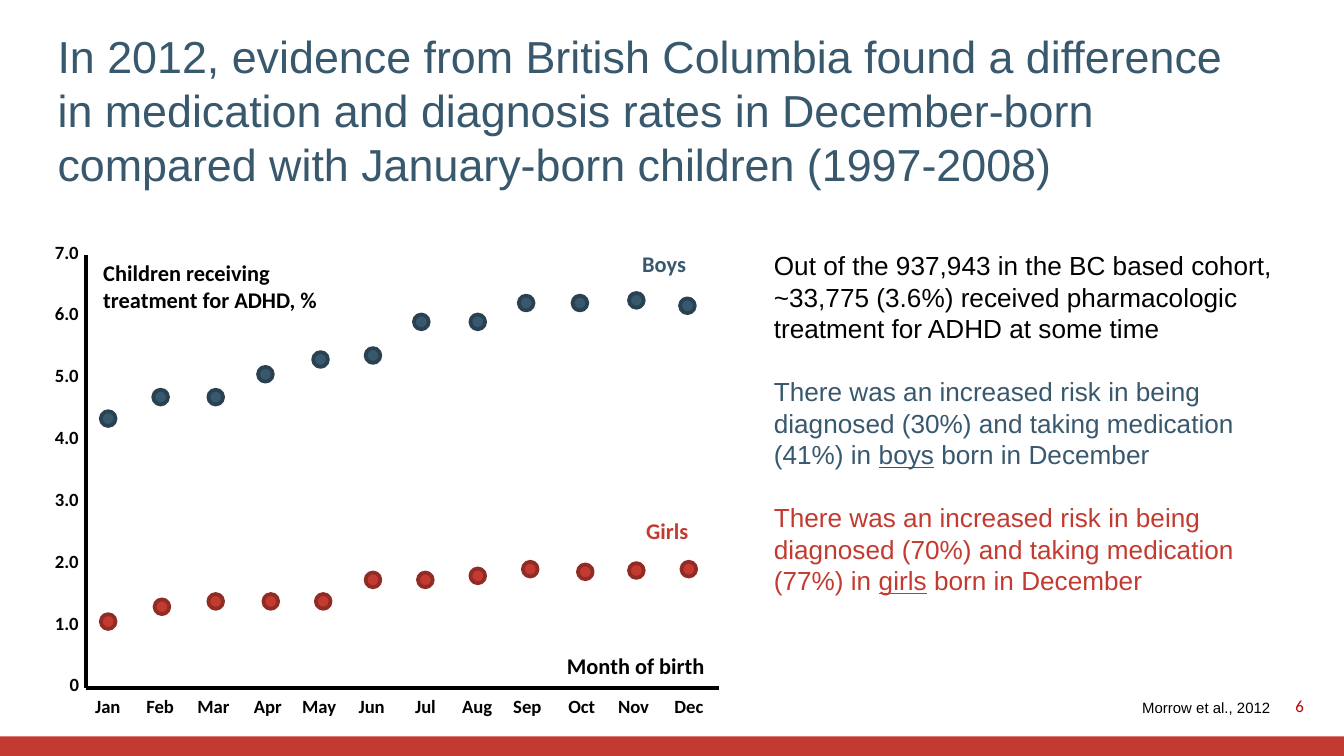
"""Build the slide on ADHD treatment by month of birth in British Columbia."""
from dataclasses import dataclass

from lxml import etree
from pptx import Presentation, util as u
from pptx.dml.color import RGBColor as Rgb
from pptx.enum import shapes, text
from pptx.oxml import ns


@dataclass(frozen=True)
class Theme:
    blue: str = "38586E"
    navy: str = "294151"
    red: str = "C33B30"
    dark: str = "902C24"
    page: str = "C00000"
    ink: str = "000000"
    head: int = 24
    body: int = 14
    label: int = 12
    tick: int = 10
    num: int = 9
    cite: int = 8
    sans: str = "Arial"
    plot: str = "Calibri"


def write(box, paras, size, face, bold=False, gap=0):
    """Add a text box; each paragraph is a colour and its runs, odd runs underlined."""
    area = deck.shapes.add_textbox(*map(u.Inches, box))
    frame = area.text_frame
    frame.word_wrap = True
    for i, (color, *runs) in enumerate(paras):
        para = frame.paragraphs[0] if i == 0 else frame.add_paragraph()
        if i:
            para.space_before = u.Pt(gap)
        font = para.font
        font.size, font.name, font.bold = u.Pt(size), face, bold
        font.color.rgb = Rgb.from_string(color)
        for j, words in enumerate(runs):
            run = para.add_run()
            run.text = words
            if j % 2:
                run.font.underline = True
    return frame


def draw(kind, box, fill, edge=None):
    """Add a flat filled shape, with an outline if an edge colour is given."""
    item = deck.shapes.add_shape(kind, *map(u.Inches, box))
    item.shadow.inherit = False
    item.fill.solid()
    item.fill.fore_color.rgb = Rgb.from_string(fill)
    if edge:
        item.line.color.rgb = Rgb.from_string(edge)
        item.line.width = u.Pt(2)
    else:
        item.line.fill.background()


t = Theme()
show = Presentation()
show.slide_width, show.slide_height = u.Inches(10), u.Inches(10 * 9 / 16)
deck = show.slides.add_slide(show.slide_layouts[6])

draw(shapes.MSO_SHAPE.RECTANGLE, (0, 5.48, 10, 0.15), t.red)
title = write((0.33, 0.48, 8.91, 0.67), [(t.blue,
              "In 2012, evidence from British Columbia found a difference in medication "
              "and diagnosis rates in December-born compared with January-born children "
              "(1997-2008)")], t.head, t.sans)
title.vertical_anchor = text.MSO_ANCHOR.MIDDLE
page = write((9.42, 5.1, 0.38, 0.3), [(t.page, "6")], t.num, t.plot)
page.vertical_anchor = text.MSO_ANCHOR.MIDDLE
page.paragraphs[0].alignment = text.PP_ALIGN.RIGHT

boys = [(0.75, 3.06), (1.14, 2.9), (1.55, 2.9), (1.92, 2.73), (2.33, 2.62), (2.72, 2.59),
        (3.08, 2.34), (3.5, 2.34), (3.86, 2.2), (4.26, 2.2), (4.68, 2.18), (5.06, 2.22)]
girls = [(0.75, 4.57), (1.15, 4.46), (1.55, 4.42), (1.96, 4.42), (2.35, 4.42), (2.72, 4.26),
         (3.11, 4.26), (3.5, 4.23), (3.89, 4.18), (4.3, 4.2), (4.68, 4.19), (5.07, 4.18)]
for dots, fill, edge in ((boys, t.blue, t.navy), (girls, t.red, t.dark)):
    for left, top in dots:
        draw(shapes.MSO_SHAPE.OVAL, (left, top, 0.11, 0.11), fill, edge)

for ends in ((0.64, 1.9, 0.64, 5.12), (0.64, 5.12, 5.35, 5.12)):
    axis = deck.shapes.add_connector(shapes.MSO_CONNECTOR.STRAIGHT, *map(u.Inches, ends))
    axis.line.color.rgb = Rgb.from_string(t.ink)
    axis.line.width = u.Pt(2)
    etree.SubElement(axis._element.spPr, ns.qn("a:effectLst"))

for i in range(8):
    left, mark = (0.31, f"{i}.0") if i else (0.42, "0")
    write((left, 4.96 - 0.46 * i, 0.43, 0.27), [(t.ink, mark)], t.tick, t.plot, True)
months = {"Jan": 0.61, "Feb": 0.99, "Mar": 1.37, "Apr": 1.79, "May": 2.15, "Jun": 2.57,
          "Jul": 2.99, "Aug": 3.34, "Sep": 3.72, "Oct": 4.13, "Nov": 4.5, "Dec": 4.92}
for month, left in months.items():
    write((left, 5.12, 0.48, 0.27), [(t.ink, month)], t.tick, t.plot, True)

for box, color, words in (
        ((0.67, 1.88, 1.9, 0.5), t.ink, "Children receiving treatment for ADHD, %"),
        ((4.12, 4.8, 1.24, 0.3), t.ink, "Month of birth"),
        ((4.68, 1.81, 0.56, 0.3), t.blue, "Boys"),
        ((4.71, 3.8, 0.54, 0.3), t.red, "Girls")):
    write(box, [(color, words)], t.label, t.plot, True)

write((8.4, 5.15, 1.26, 0.25), [(t.ink, "Morrow et al., 2012")], t.cite, t.sans)
write((5.66, 1.81, 4.03, 2.93), [
    (t.ink, "Out of the 937,943 in the BC based cohort, ~33,775 (3.6%) received "
            "pharmacologic treatment for ADHD at some time"),
    (t.blue, "There was an increased risk in being diagnosed (30%) and taking "
             "medication (41%) in ", "boys", " born in December"),
    (t.red, "There was an increased risk in being diagnosed (70%) and taking "
            "medication (77%) in ", "girls", " born in December"),
], t.body, t.sans, gap=17)

show.save("out.pptx")
